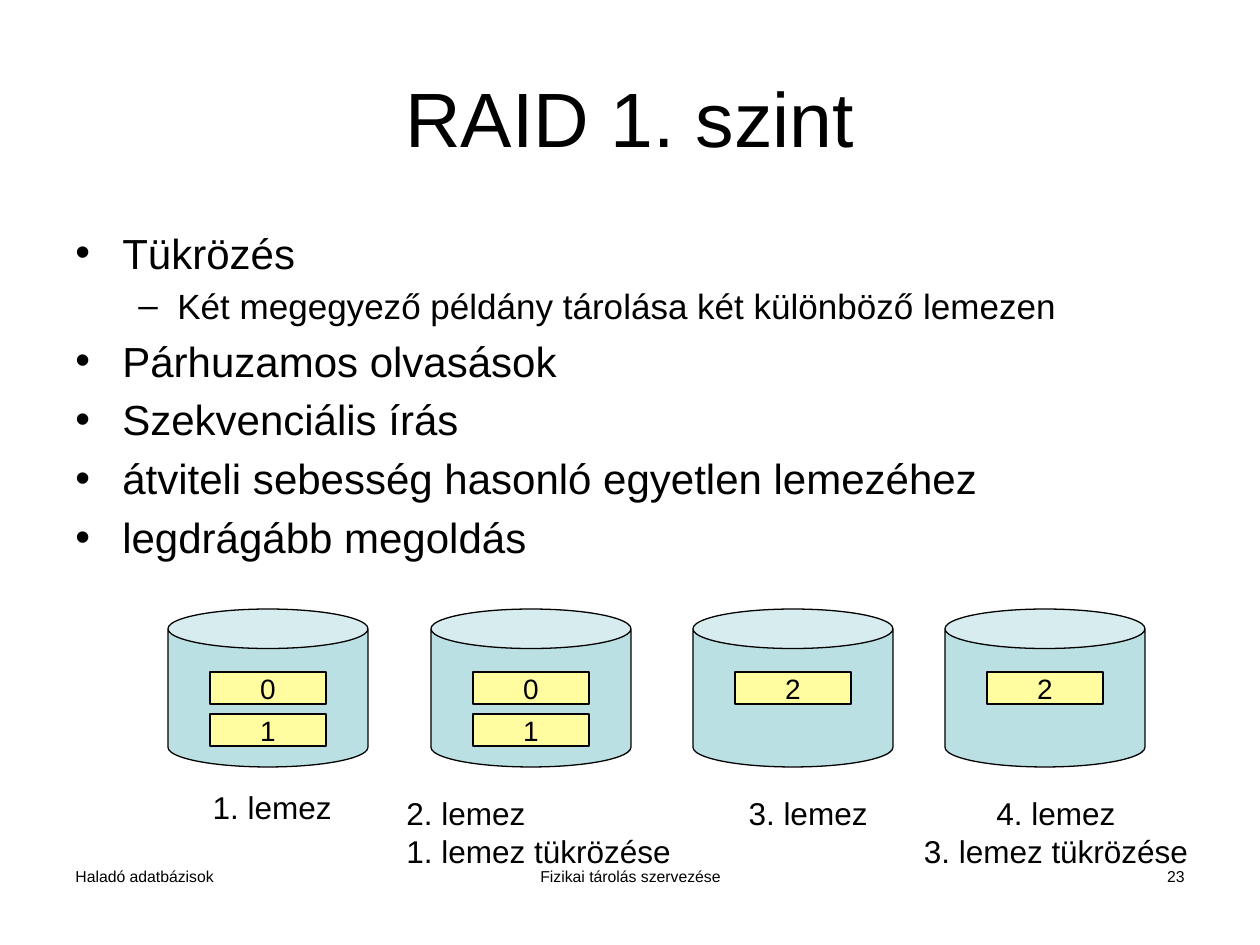
from dataclasses import dataclass

from lxml import etree
from pptx import Presentation
from pptx import util as u
from pptx.dml.color import RGBColor
from pptx.enum import shapes, text
from pptx.oxml.ns import qn

PX = u.Inches(1) / 126
LEFT, CENTER, RIGHT = text.PP_ALIGN.LEFT, text.PP_ALIGN.CENTER, text.PP_ALIGN.RIGHT


def px(length):
    return u.Emu(round(length * PX))


@dataclass(frozen=True)
class Theme:
    font: str = "Arial"
    ink: str = "000000"
    disk: str = "BBE0E3"
    block: str = "FFFDA0"
    title: int = 44
    body: int = 24
    detail: int = 20
    caption: int = 18
    number: int = 16
    footer: int = 9
    line: float = 0.75


class SlideBuilder:
    def __init__(self, slide, theme):
        self.slide = slide
        self.theme = theme

    def add_run(self, paragraph, words, size):
        run = paragraph.add_run()
        run.text = words
        run.font.name = self.theme.font
        run.font.size = u.Pt(size)
        run.font.color.rgb = RGBColor.from_string(self.theme.ink)

    def add_lines(self, frame, lines, size, align):
        for index, line in enumerate(lines):
            paragraph = frame.add_paragraph() if index else frame.paragraphs[0]
            paragraph.alignment = align
            self.add_run(paragraph, line, size)

    def text_frame(self, box, wrap=True):
        frame = self.slide.shapes.add_textbox(*map(px, box)).text_frame
        frame.word_wrap = wrap
        return frame

    def label(self, box, words, size, align, anchor=text.MSO_ANCHOR.TOP):
        frame = self.text_frame(box)
        frame.vertical_anchor = anchor
        self.add_lines(frame, [words], size, align)

    def caption(self, box, lines, align):
        frame = self.text_frame(box, wrap=False)
        frame.auto_size = text.MSO_AUTO_SIZE.SHAPE_TO_FIT_TEXT
        self.add_lines(frame, lines, self.theme.caption, align)

    def bullets(self, box, items):
        styles = (("•", 47, 47, self.theme.body), ("–", 102, 39, self.theme.detail))
        frame = self.text_frame(box)
        for index, (level, words) in enumerate(items):
            mark, margin, hanging, size = styles[level]
            paragraph = frame.add_paragraph() if index else frame.paragraphs[0]
            paragraph.level = level
            self.add_run(paragraph, words, size)
            properties = paragraph._p.get_or_add_pPr()
            properties.set("marL", str(px(margin)))
            properties.set("indent", str(-px(hanging)))
            spacing = etree.SubElement(properties, qn("a:spcBef"))
            etree.SubElement(spacing, qn("a:spcPct")).set("val", "20000")
            etree.SubElement(properties, qn("a:buFont")).set("typeface", self.theme.font)
            etree.SubElement(properties, qn("a:buChar")).set("char", mark)

    def shape(self, kind, box, fill):
        shape = self.slide.shapes.add_shape(kind, *map(px, box))
        shape.shadow.inherit = False
        shape.fill.solid()
        shape.fill.fore_color.rgb = RGBColor.from_string(fill)
        shape.line.color.rgb = RGBColor.from_string(self.theme.ink)
        shape.line.width = u.Pt(self.theme.line)
        return shape

    def disk(self, left, top, blocks):
        self.shape(shapes.MSO_SHAPE.CAN, (left, top, 200, 158), self.theme.disk)
        for row, number in enumerate(blocks):
            box = (left + 42, top + 63 + 42 * row, 116, 32)
            frame = self.shape(shapes.MSO_SHAPE.RECTANGLE, box, self.theme.block).text_frame
            frame.word_wrap = False
            frame.vertical_anchor = text.MSO_ANCHOR.MIDDLE
            self.add_lines(frame, [number], self.theme.number, CENTER)


def main():
    presentation = Presentation()
    presentation.slide_width, presentation.slide_height = px(1260), px(945)
    theme = Theme()
    builder = SlideBuilder(presentation.slides.add_slide(presentation.slide_layouts[6]), theme)

    footers = (
        (63, 294, "Haladó adatbázisok", LEFT),
        (431, 399, "Fizikai tárolás szervezése", CENTER),
        (903, 294, "23", RIGHT),
    )
    for left, width, words, align in footers:
        builder.label((left, 861, width, 66), words, theme.footer, align)

    builder.label((63, 38, 1134, 158), "RAID 1. szint", theme.title, CENTER, text.MSO_ANCHOR.MIDDLE)
    builder.bullets((63, 221, 1134, 362), (
        (0, "Tükrözés"),
        (1, "Két megegyező példány tárolása két különböző lemezen"),
        (0, "Párhuzamos olvasások"),
        (0, "Szekvenciális írás"),
        (0, "átviteli sebesség hasonló egyetlen lemezéhez"),
        (0, "legdrágább megoldás"),
    ))

    for left, blocks in ((168, "01"), (431, "01"), (693, "2"), (945, "2")):
        builder.disk(left, 609, blocks)

    captions = (
        ((199, 782, 146, 50), ["1. lemez"], CENTER),
        ((394, 788, 292, 89), ["2. lemez", "1. lemez tükrözése"], LEFT),
        ((735, 788, 146, 50), ["3. lemez"], CENTER),
        ((910, 788, 292, 89), ["4. lemez", "3. lemez tükrözése"], CENTER),
    )
    for box, lines, align in captions:
        builder.caption(box, lines, align)

    presentation.save("out.pptx")


if __name__ == "__main__":
    main()
